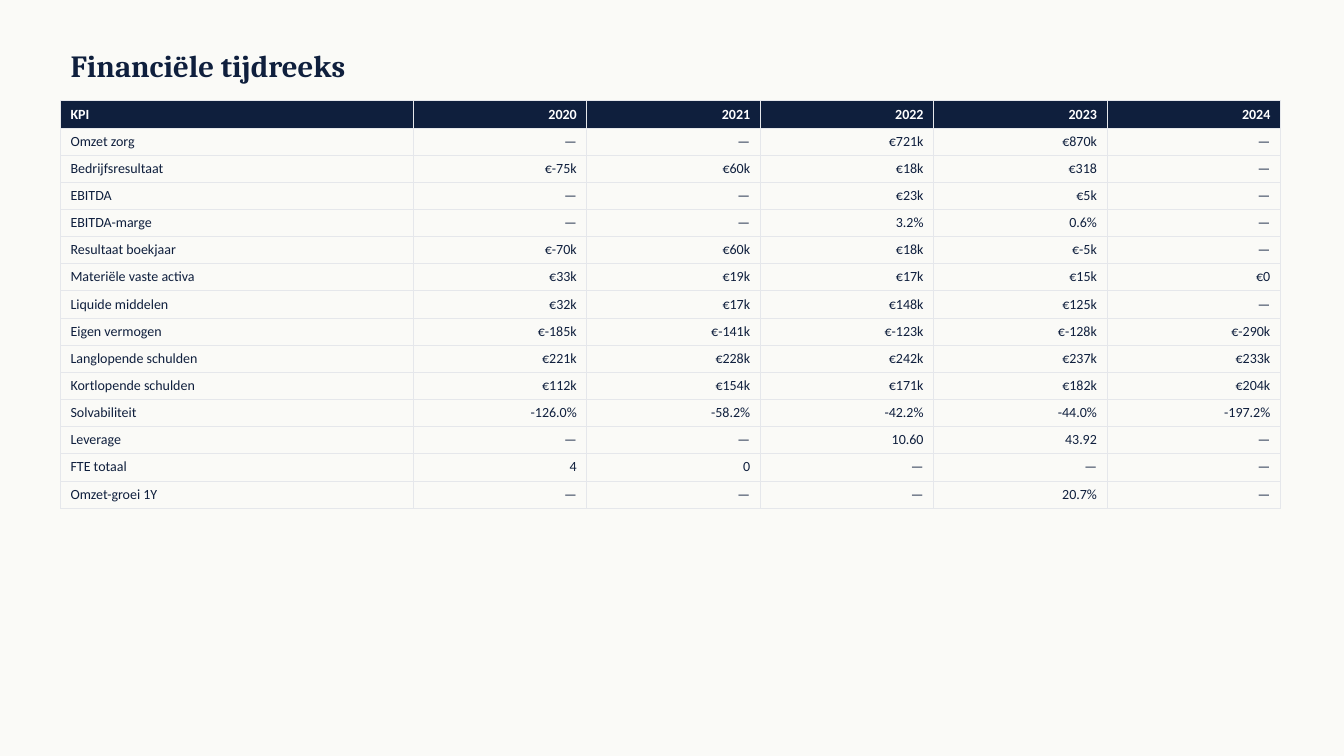
from lxml import etree
from pptx import Presentation
from pptx.dml.color import RGBColor
from pptx.enum.text import MSO_ANCHOR, MSO_AUTO_SIZE, PP_ALIGN
from pptx.oxml.ns import qn
from pptx.util import Inches, Pt

LEFT, RIGHT = PP_ALIGN.LEFT, PP_ALIGN.RIGHT
MIDDLE, FIXED = MSO_ANCHOR.MIDDLE, MSO_AUTO_SIZE.NONE

TITLE = "Financiële tijdreeks"
ROWS = [
    ("KPI", "2020", "2021", "2022", "2023", "2024"),
    ("Omzet zorg", "—", "—", "€721k", "€870k", "—"),
    ("Bedrijfsresultaat", "€-75k", "€60k", "€18k", "€318", "—"),
    ("EBITDA", "—", "—", "€23k", "€5k", "—"),
    ("EBITDA-marge", "—", "—", "3.2%", "0.6%", "—"),
    ("Resultaat boekjaar", "€-70k", "€60k", "€18k", "€-5k", "—"),
    ("Materiële vaste activa", "€33k", "€19k", "€17k", "€15k", "€0"),
    ("Liquide middelen", "€32k", "€17k", "€148k", "€125k", "—"),
    ("Eigen vermogen", "€-185k", "€-141k", "€-123k", "€-128k", "€-290k"),
    ("Langlopende schulden", "€221k", "€228k", "€242k", "€237k", "€233k"),
    ("Kortlopende schulden", "€112k", "€154k", "€171k", "€182k", "€204k"),
    ("Solvabiliteit", "-126.0%", "-58.2%", "-42.2%", "-44.0%", "-197.2%"),
    ("Leverage", "—", "—", "10.60", "43.92", "—"),
    ("FTE totaal", "4", "0", "—", "—", "—"),
    ("Omzet-groei 1Y", "—", "—", "—", "20.7%", "—"),
]

THEME = {
    "paper": "FAFAF7", "navy": "0F1F3D", "rule": "E5E7EB", "rule_pt": 0.5,
    "title": {"name": "Cambria", "size": Pt(22), "bold": True, "color": "0F1F3D"},
    "head": {"name": "Calibri", "size": Pt(10), "bold": True, "color": "FFFFFF"},
    "body": {"name": "Calibri", "size": Pt(10), "bold": False, "color": "0F1F3D"},
}
WIDTH, HEIGHT = 13.33, 7.5
MARGIN, TOP = 0.6, 1
TABLE_W, TABLE_H, LABEL_W = 12.1, 4.04, 3.5


def write(frame, text, style, align):
    para = frame.paragraphs[0]
    para.alignment = align
    run = para.add_run()
    run.text = text
    for key, value in style.items():
        if key == "color":
            run.font.color.rgb = RGBColor.from_string(value)
        else:
            setattr(run.font, key, value)


def rule(cell):
    """Draw a thin line on all four sides of a cell."""
    props = cell._tc.get_or_add_tcPr()
    for side in ("lnL", "lnR", "lnT", "lnB"):
        line = etree.SubElement(props, qn("a:" + side), w=str(Pt(THEME["rule_pt"])))
        fill = etree.SubElement(line, qn("a:solidFill"))
        etree.SubElement(fill, qn("a:srgbClr"), val=THEME["rule"])


def add_title(slide):
    title = slide.shapes.title
    box = {"left": MARGIN, "top": 0.4, "width": 12, "height": 0.5}
    for key, value in box.items():
        setattr(title, key, Inches(value))
    frame = title.text_frame
    frame.auto_size, frame.vertical_anchor = FIXED, MIDDLE
    write(frame, TITLE, THEME["title"], LEFT)


def add_grid(slide):
    years = len(ROWS[0]) - 1
    table = slide.shapes.add_table(
        len(ROWS), years + 1, Inches(MARGIN), Inches(TOP),
        Inches(TABLE_W), Inches(TABLE_H)).table
    table.first_row = table.horz_banding = False
    for col, column in enumerate(table.columns):
        column.width = Inches((TABLE_W - LABEL_W) / years if col else LABEL_W)
    for row, values in enumerate(ROWS):
        for col, text in enumerate(values):
            cell = table.cell(row, col)
            rule(cell)
            if row:
                cell.fill.background()
            else:
                cell.fill.solid()
                cell.fill.fore_color.rgb = RGBColor.from_string(THEME["navy"])
            write(cell.text_frame, text, THEME["body" if row else "head"],
                  RIGHT if col else LEFT)


def main():
    deck = Presentation()
    deck.slide_width, deck.slide_height = Inches(WIDTH), Inches(HEIGHT)
    slide = deck.slides.add_slide(deck.slide_layouts.get_by_name("Title Only"))
    slide.background.fill.solid()
    slide.background.fill.fore_color.rgb = RGBColor.from_string(THEME["paper"])
    add_title(slide)
    add_grid(slide)
    deck.save("out.pptx")


if __name__ == "__main__":
    main()
